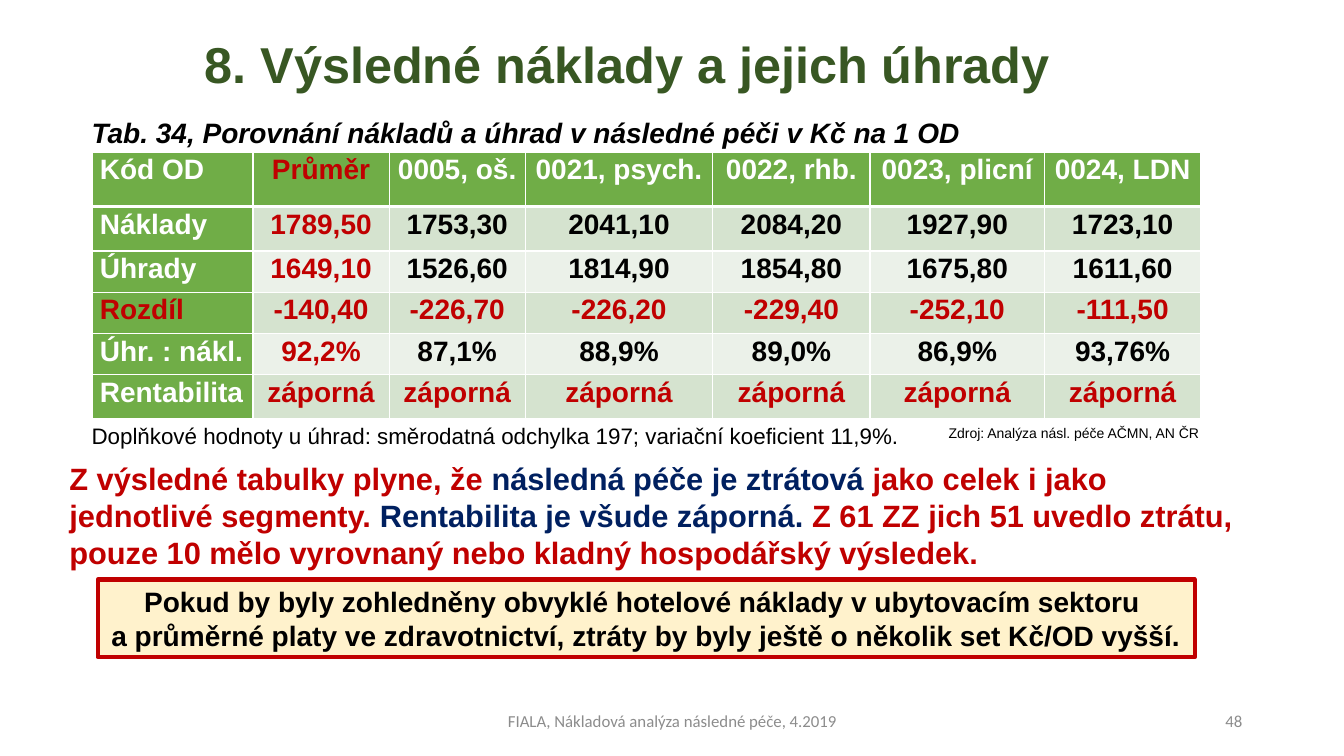
from lxml.etree import SubElement
from pptx import Presentation
from pptx.dml.color import RGBColor
from pptx.enum.shapes import MSO_SHAPE
from pptx.enum.text import MSO_ANCHOR, PP_ALIGN
from pptx.oxml.ns import qn
from pptx.util import Inches, Pt

COLORS = {
    "white": "FFFFFF", "black": "000000", "red": "C00000", "navy": "002060",
    "title": "385723", "gray": "8C8C8C", "green": "70AD47",
    "band_dark": "D5E3CF", "band_light": "EBF1E9", "cream": "FFF2CC",
}


def color(name):
    return RGBColor.from_string(COLORS[name])


def write(frame, paragraphs, size, align=PP_ALIGN.LEFT, bold=False, italic=False,
          font="Arial", spacing=None):
    """Fill a text frame; each paragraph is a list of (text, color name) runs."""
    for index, runs in enumerate(paragraphs):
        para = frame.add_paragraph() if index else frame.paragraphs[0]
        para.alignment = align
        if spacing:
            para.line_spacing = spacing
        for text, color_name in runs:
            span = para.add_run()
            span.text = text
            span.font.name = font
            span.font.size = Pt(size)
            span.font.bold = bold
            span.font.italic = italic
            span.font.color.rgb = color(color_name)


deck = Presentation()
deck.slide_width, deck.slide_height = Inches(13.33), Inches(7.5)
page = deck.slides.add_slide(deck.slide_layouts[6])

# Text boxes: position, wrapping, anchor, runs, formatting
conclusion = [
    ("Z výsledné tabulky plyne, že ", "red"),
    ("následná péče je ztrátová", "navy"),
    (" jako celek i jako jednotlivé segmenty. ", "red"),
    ("Rentabilita je všude záporná.", "navy"),
    (" Z 61 ZZ jich 51 uvedlo ztrátu, pouze 10 mělo vyrovnaný nebo kladný "
     "hospodářský výsledek.", "red"),
]
text_boxes = [
    ((0.92, 0.2, 10.61, 0.94), True, MSO_ANCHOR.MIDDLE,
     [("8. Výsledné náklady a jejich úhrady", "title")],
     dict(size=36, bold=True, align=PP_ALIGN.CENTER, spacing=0.9)),
    ((0.81, 1.13, 11.5, 4.76), True, MSO_ANCHOR.TOP,
     [("Tab. 34, Porovnání nákladů a úhrad v následné péči v Kč na 1 OD", "black")],
     dict(size=20, bold=True, italic=True, spacing=0.9)),
    ((0.81, 4.14, 8.39, 0.37), True, MSO_ANCHOR.TOP,
     [("Doplňkové hodnoty u úhrad: směrodatná odchylka 197; "
       "variační koeficient 11,9%.", "black")],
     dict(size=16, align=PP_ALIGN.JUSTIFY)),
    ((9.31, 4.16, 2.73, 0.27), False, MSO_ANCHOR.TOP,
     [("Zdroj: Analýza násl. péče AČMN, AN ČR", "black")], dict(size=10)),
    ((0.59, 4.51, 11.81, 1.21), True, MSO_ANCHOR.TOP, conclusion,
     dict(size=22, bold=True)),
    ((4.42, 6.95, 4.5, 0.4), True, MSO_ANCHOR.MIDDLE,
     [("FIALA, Nákladová analýza následné péče, 4.2019", "gray")],
     dict(size=12, font="Calibri", align=PP_ALIGN.CENTER)),
    ((9.42, 6.95, 3, 0.4), True, MSO_ANCHOR.MIDDLE, [("48", "gray")],
     dict(size=12, font="Calibri", align=PP_ALIGN.RIGHT)),
]
for place, wrap, anchor, runs, formatting in text_boxes:
    box = page.shapes.add_textbox(*map(Inches, place))
    box.text_frame.word_wrap = wrap
    box.text_frame.vertical_anchor = anchor
    write(box.text_frame, [runs], **formatting)

# Cost and payment table
rows = [
    ["Kód OD", "Průměr", "0005, oš.", "0021, psych.", "0022, rhb.", "0023, plicní",
     "0024, LDN"],
    ["Náklady", "1789,50", "1753,30", "2041,10", "2084,20", "1927,90", "1723,10"],
    ["Úhrady", "1649,10", "1526,60", "1814,90", "1854,80", "1675,80", "1611,60"],
    ["Rozdíl", "-140,40", "-226,70", "-226,20", "-229,40", "-252,10", "-111,50"],
    ["Úhr. : nákl.", "92,2%", "87,1%", "88,9%", "89,0%", "86,9%", "93,76%"],
    ["Rentabilita"] + ["záporná"] * 6,
]
column_widths = [1.59, 1.35, 1.35, 1.86, 1.56, 1.73, 1.55]
row_heights = [0.54, 0.44, 0.41, 0.41, 0.41, 0.43]
table = page.shapes.add_table(
    len(rows), len(column_widths), Inches(0.92), Inches(1.51),
    Inches(10.99), Inches(2.65)).table
table.first_col = True
for column, width in zip(table.columns, column_widths):
    column.width = Inches(width)
for row, height in zip(table.rows, row_heights):
    row.height = Inches(height)

for r, values in enumerate(rows):
    for c, value in enumerate(values):
        cell = table.cell(r, c)
        cell.margin_left = cell.margin_right = Inches(0.07)
        cell.margin_top = cell.margin_bottom = 0
        is_header = r == 0 or c == 0
        if c == 1 or values[0] == "Rozdíl" or value == "záporná":
            text_color = "red"
        else:
            text_color = "white" if is_header else "black"
        write(cell.text_frame, [[(value, text_color)]], 20, bold=True, spacing=1.07,
              align=PP_ALIGN.CENTER if c else PP_ALIGN.LEFT)

        properties = cell._tc.get_or_add_tcPr()
        for side in ("lnL", "lnR", "lnT", "lnB"):
            thick = (r, side) in ((0, "lnB"), (1, "lnT"))
            border = SubElement(properties, qn(f"a:{side}"), w=str(Pt(3 if thick else 1)))
            fill = SubElement(border, qn("a:solidFill"))
            SubElement(fill, qn("a:srgbClr"), val=COLORS["white"])
        cell.fill.solid()
        band = "band_dark" if r % 2 else "band_light"
        cell.fill.fore_color.rgb = color("green" if is_header else band)

# Highlighted closing remark
remark = page.shapes.add_shape(
    MSO_SHAPE.RECTANGLE, Inches(0.97), Inches(5.75), Inches(10.88), Inches(0.77))
remark.shadow.inherit = False
remark.fill.solid()
remark.fill.fore_color.rgb = color("cream")
remark.line.color.rgb = color("red")
remark.line.width = Pt(3)
remark.text_frame.word_wrap = False
remark.text_frame.vertical_anchor = MSO_ANCHOR.TOP
write(remark.text_frame, [
    [("Pokud by byly zohledněny obvyklé hotelové náklady v ubytovacím sektoru ", "black")],
    [("a průměrné platy ve zdravotnictví, ztráty by byly ještě o několik set "
      "Kč/OD vyšší.", "black")],
], 20, align=PP_ALIGN.CENTER, bold=True)

deck.save("out.pptx")
